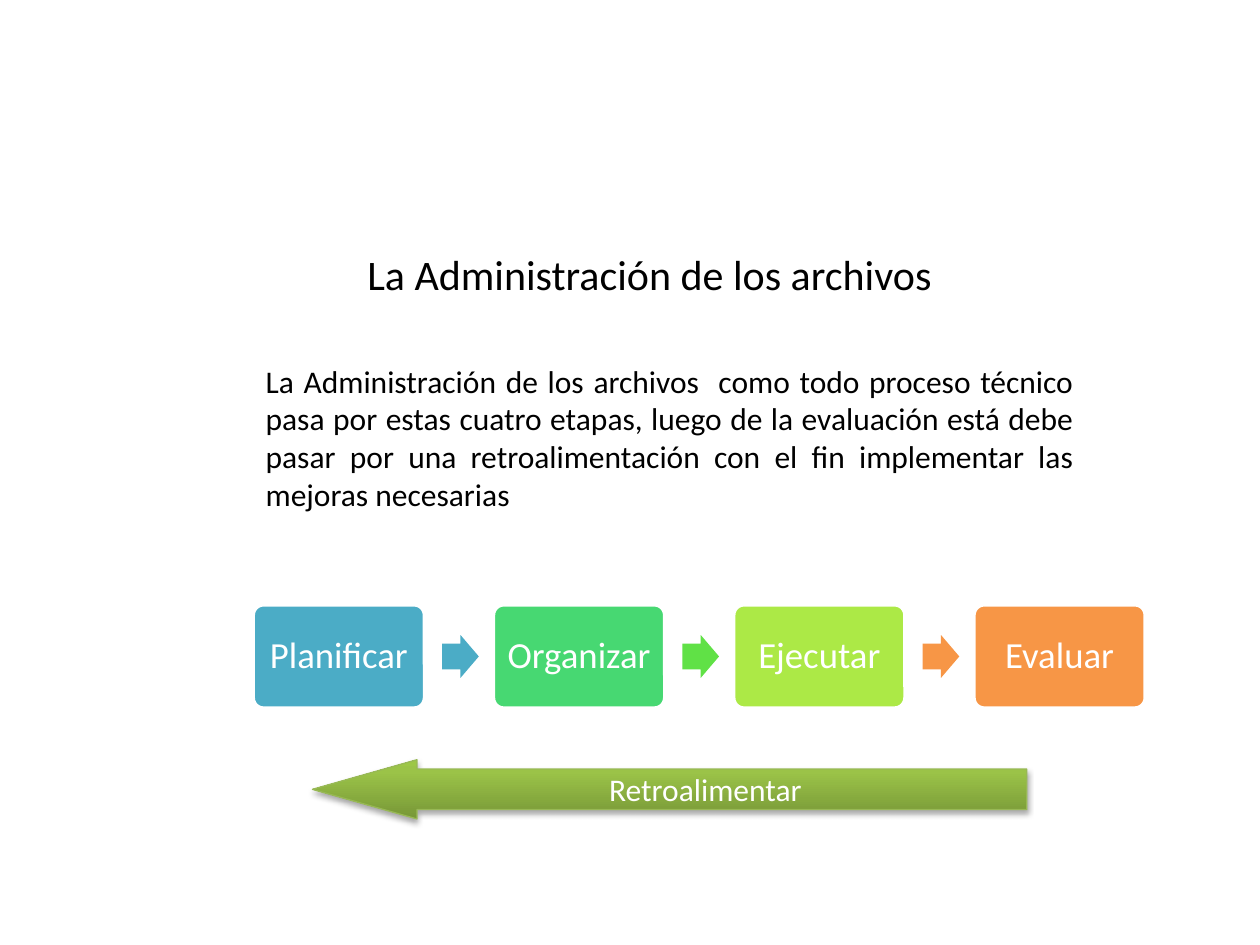
from copy import deepcopy

from lxml import etree
from pptx import Presentation
from pptx import util as u
from pptx.dml.color import RGBColor
from pptx.enum import shapes, text
from pptx.oxml import ns

WIDTH, HEIGHT = u.Inches(10), u.Inches(7.5)
COL, ROW = WIDTH / 100, HEIGHT / 75

BLACK = RGBColor(0x00, 0x00, 0x00)
WHITE = RGBColor(0xFF, 0xFF, 0xFF)
TEAL = RGBColor(0x4B, 0xAC, 0xC6)
EMERALD = RGBColor(0x47, 0xD8, 0x72)
GREEN = RGBColor(0x60, 0xE1, 0x46)
LIME = RGBColor(0xAC, 0xE9, 0x46)
ORANGE = RGBColor(0xF7, 0x96, 0x46)
OLIVE_LINE = RGBColor(0x98, 0xB9, 0x55)
OLIVE_STOPS = [
    (0, RGBColor(0x77, 0x97, 0x37)),
    (0.8, RGBColor(0x9B, 0xC3, 0x48)),
    (1, RGBColor(0x9D, 0xC7, 0x46)),
]

STEPS = [
    ("Planificar", TEAL, TEAL),
    ("Organizar", EMERALD, GREEN),
    ("Ejecutar", LIME, ORANGE),
    ("Evaluar", ORANGE, None),
]


def place(left, top, width, height):
    return [u.Emu(round(n)) for n in (left * COL, top * ROW, width * COL, height * ROW)]


def write(s, words, size, color, align=text.PP_ALIGN.CENTER):
    tf = s.text_frame
    tf.word_wrap = True
    tf.vertical_anchor = text.MSO_ANCHOR.MIDDLE
    p = tf.paragraphs[0]
    p.alignment = align
    r = p.add_run()
    r.text = words
    r.font.name = "Calibri"
    r.font.size = u.Pt(size)
    r.font.color.rgb = color
    return p


def add_solid(parent, preset, box, color, adjustments):
    s = parent.add_shape(preset, *place(*box))
    s.shadow.inherit = False
    s.fill.solid()
    s.fill.fore_color.rgb = color
    s.line.fill.background()
    for i, value in enumerate(adjustments):
        s.adjustments[i] = value
    return s


def add_text(slide, box, words, size, align):
    s = slide.shapes.add_textbox(*place(*box))
    write(s, words, size, BLACK, align)


def add_process(slide, box):
    left, top, width, height = box
    step_width, arrow_width, arrow_height = 13.6, 2.9, 3.4
    pitch = (width - step_width) / (len(STEPS) - 1)
    parts = slide.shapes.add_group_shape().shapes
    for i, (label, color, arrow_color) in enumerate(STEPS):
        x = left + i * pitch
        s = add_solid(parts, shapes.MSO_SHAPE.ROUNDED_RECTANGLE,
                      (x, top, step_width, height), color, [0.1])
        s.line.color.rgb = WHITE
        s.line.width = u.Pt(2)
        tf = s.text_frame
        tf.margin_left = tf.margin_right = u.Inches(0.04)
        tf.margin_top = tf.margin_bottom = u.Inches(0.09)
        write(s, label, 21, WHITE).line_spacing = 0.9
        if arrow_color is not None:
            add_solid(parts, shapes.MSO_SHAPE.RIGHT_ARROW,
                      (x + step_width + 1.4, top + (height - arrow_height) / 2,
                       arrow_width, arrow_height), arrow_color, [0.6, 0.5])


def add_feedback(slide, box):
    s = add_solid(slide.shapes, shapes.MSO_SHAPE.LEFT_ARROW, box, WHITE, [0.685, 1.765])
    s.fill.gradient()
    s.fill.gradient_angle = 90
    stop_list = s._element.spPr.find(".//" + ns.qn("a:gsLst"))
    stop_list.append(deepcopy(stop_list[-1]))
    for stop, (position, color) in zip(s.fill.gradient_stops, OLIVE_STOPS):
        stop.position = position
        stop.color.rgb = color
    s.line.color.rgb = OLIVE_LINE
    s.line.width = u.Pt(0.75)
    effects = s._element.spPr.find(ns.qn("a:effectLst"))
    shadow = etree.SubElement(effects, ns.qn("a:outerShdw"), blurRad="40000",
                              dist="23000", dir="5400000", rotWithShape="0")
    tint = etree.SubElement(shadow, ns.qn("a:srgbClr"), val=str(BLACK))
    etree.SubElement(tint, ns.qn("a:alpha"), val="35000")
    write(s, "Retroalimentar", 18, WHITE)


def main():
    prs = Presentation()
    prs.slide_width, prs.slide_height = WIDTH, HEIGHT
    slide = prs.slides.add_slide(prs.slide_layouts[6])
    add_text(slide, (18.5, 18.6, 66.1, 6.3), "La Administración de los archivos",
             24, text.PP_ALIGN.CENTER)
    add_text(slide, (20.1, 29.6, 66.1, 10.2),
             "La Administración de los archivos  como todo proceso técnico pasa por "
             "estas cuatro etapas, luego de la evaluación está debe pasar por una "
             "retroalimentación con el fin implementar las mejoras necesarias",
             18, text.PP_ALIGN.JUSTIFY)
    add_process(slide, (20.1, 48, 70.8, 8.2))
    add_feedback(slide, (24.8, 60.3, 56.7, 4.7))
    prs.save("out.pptx")


if __name__ == "__main__":
    main()
